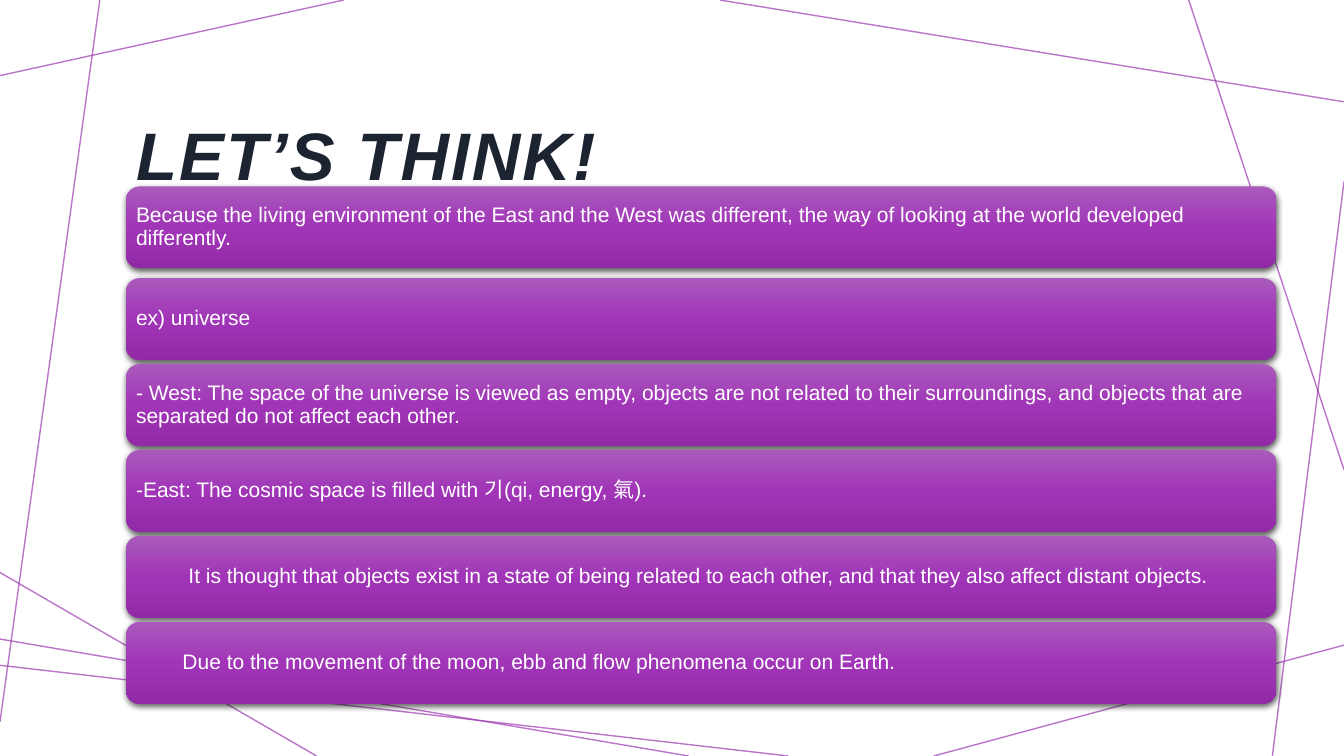
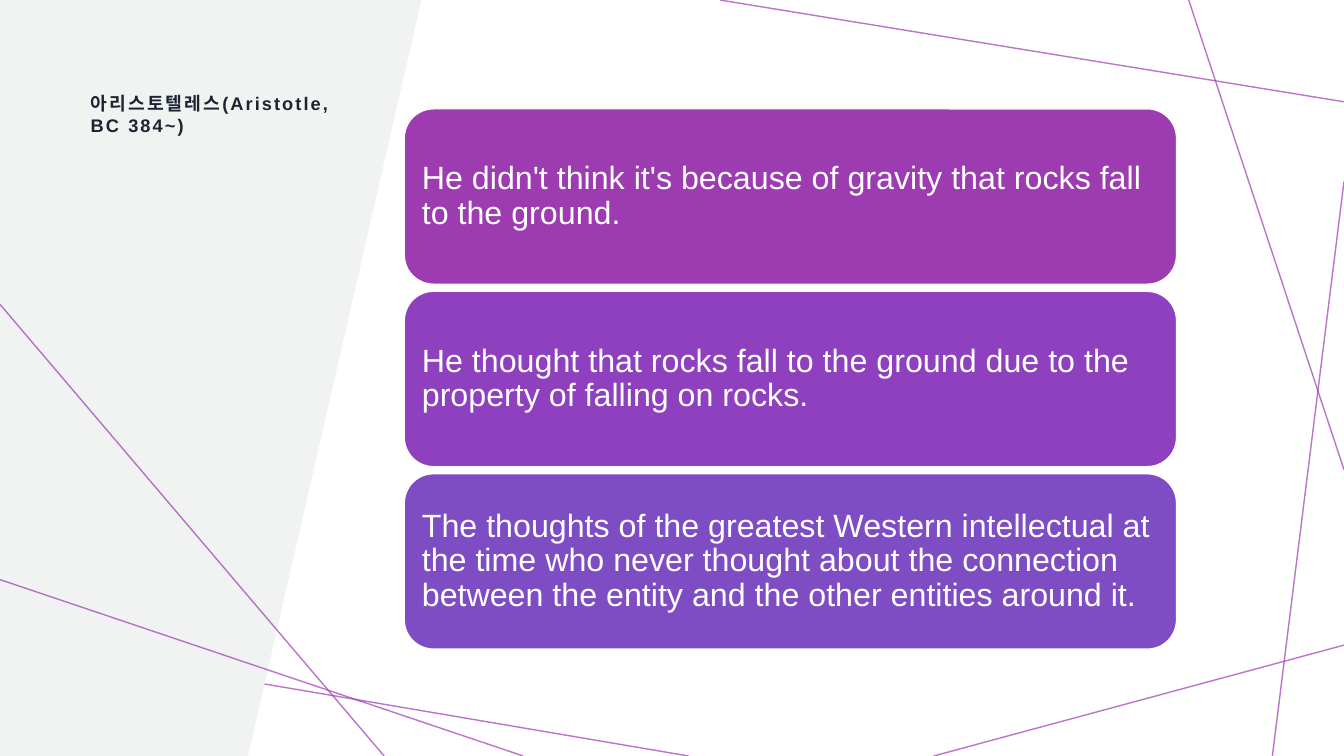
import pptx
import pptx.util
import pptx.dml.color
import pptx.enum.shapes
import pptx.enum.text
import pptx.oxml
import pptx.oxml.ns

Inches = pptx.util.Inches
Pt = pptx.util.Pt
qn = pptx.oxml.ns.qn
MIDDLE = pptx.enum.text.MSO_ANCHOR.MIDDLE
TOP = pptx.enum.text.MSO_ANCHOR.TOP

WIDTH, HEIGHT = 13.33, 7.5
FONT = "Arial"
COLORS = {
    "line": "9D3BB1",
    "title": "1B2430",
    "panel": "F0F3F1",
    "white": "FFFFFF",
    "plum": "9D3BB1",
    "violet": "8F40BE",
    "indigo": "7E4DC3",
    "glow_top": "A95ABC",
    "glow_middle": "A135B7",
    "glow_bottom": "922AA8",
    "shadow": "000000",
}
NAMESPACE = 'xmlns:a="http://schemas.openxmlformats.org/drawingml/2006/main"'

SHARED_LINES = [
    (3.41, 0, 0, 0.75),
    (0.99, 0, 0, 7.16),
    (6.83, HEIGHT, 0, 6.34),
    (WIDTH, 6.4, 9.26, HEIGHT),
    (WIDTH, 1.8, 12.62, HEIGHT),
    (WIDTH, 4.66, 11.79, 0),
    (WIDTH, 1.01, 7.14, 0),
]

# Each bar: text and left indent in inches
THOUGHTS = [
    ("Because the living environment of the East and the West was different, "
     "the way of looking at the world developed differently.", 0),
    ("ex) universe", 0),
    ("- West: The space of the universe is viewed as empty, objects are not "
     "related to their surroundings, and objects that are separated do not "
     "affect each other.", 0),
    ("-East: The cosmic space is filled with 기(qi, energy, 氣).", 0),
    ("It is thought that objects exist in a state of being related to each "
     "other, and that they also affect distant objects.", 0.52),
    ("Due to the movement of the moon, ebb and flow phenomena occur on Earth.",
     0.46),
]

ARISTOTLE_CARDS = [
    ("He didn't think it's because of gravity that rocks fall to the ground.",
     "plum"),
    ("He thought that rocks fall to the ground due to the property of falling "
     "on rocks.", "violet"),
    ("The thoughts of the greatest Western intellectual at the time who never "
     "thought about the connection between the entity and the other entities "
     "around it.", "indigo"),
]


def rgb(name):
    return pptx.dml.color.RGBColor.from_string(COLORS[name])


def apply(target, values):
    for name, value in values.items():
        setattr(target, name, value)


def add_line(slide, start_x, start_y, end_x, end_y):
    connector = slide.shapes.add_connector(
        pptx.enum.shapes.MSO_CONNECTOR.STRAIGHT,
        Inches(start_x), Inches(start_y), Inches(end_x), Inches(end_y))
    connector.line.width = Pt(1)
    connector.line.color.rgb = rgb("line")
    properties = connector.element.spPr
    color = properties.find(".//" + qn("a:srgbClr"))
    color.append(pptx.oxml.parse_xml(f'<a:alpha {NAMESPACE} val="70000"/>'))
    properties.append(pptx.oxml.parse_xml(f"<a:effectLst {NAMESPACE}/>"))
    return connector


def move_lines_to_layout(slide):
    """Draw the lines every slide shares and hand them to the layout."""
    for number, ends in enumerate(SHARED_LINES):
        element = add_line(slide, *ends).element
        element.nvCxnSpPr.cNvPr.set("id", str(100 + number))
        slide.slide_layout.shapes.element.append(element)


def set_title(slide, text, box, size, anchor, italic=None, margins=None):
    title = slide.shapes.title
    left, top, width, height = map(Inches, box)
    apply(title, {"left": left, "top": top, "width": width, "height": height})
    frame = title.text_frame
    frame.text = text
    apply(frame, {"word_wrap": True, "vertical_anchor": anchor,
                  "auto_size": pptx.enum.text.MSO_AUTO_SIZE.NONE,
                  **(margins or {})})
    paragraph = frame.paragraphs[0]
    apply(paragraph, {"alignment": pptx.enum.text.PP_ALIGN.LEFT,
                      "line_spacing": 1.05})
    run = paragraph.runs[0]
    apply(run.font, {"name": FONT, "size": Pt(size), "bold": True,
                     "italic": italic})
    run.font.color.rgb = rgb("title")
    run.font._element.set("spc", "150")


def add_card(slide, text, box, size, margin, indent=0):
    """Add a rounded box with white text; its fill is left to the caller."""
    card = slide.shapes.add_shape(
        pptx.enum.shapes.MSO_SHAPE.ROUNDED_RECTANGLE, *map(Inches, box))
    card.shadow.inherit = False
    frame = card.text_frame
    frame.text = text
    apply(frame, {"word_wrap": True, "vertical_anchor": MIDDLE,
                  "margin_left": Inches(margin + indent),
                  "margin_right": Inches(margin),
                  "margin_top": Inches(margin),
                  "margin_bottom": Inches(margin)})
    paragraph = frame.paragraphs[0]
    apply(paragraph, {"alignment": pptx.enum.text.PP_ALIGN.LEFT,
                      "line_spacing": 0.9})
    apply(paragraph.font, {"name": FONT, "size": Pt(size)})
    paragraph.font.color.rgb = rgb("white")
    return card


def add_glow(card):
    """Give a card a three-stop vertical gradient and a soft shadow."""
    card.line.fill.background()
    card.fill.background()
    stops = "".join(
        f'<a:gs pos="{position}"><a:srgbClr val="{COLORS[name]}"/></a:gs>'
        for position, name in ((0, "glow_top"), (50000, "glow_middle"),
                               (100000, "glow_bottom")))
    properties = card.element.spPr
    properties.replace(properties.find(qn("a:noFill")), pptx.oxml.parse_xml(
        f'<a:gradFill {NAMESPACE} rotWithShape="1"><a:gsLst>{stops}</a:gsLst>'
        '<a:lin ang="5400000" scaled="0"/></a:gradFill>'))
    properties.find(qn("a:effectLst")).append(pptx.oxml.parse_xml(
        f'<a:outerShdw {NAMESPACE} blurRad="{Pt(4.5)}" dist="{Pt(1.5)}" '
        'dir="5400000" algn="ctr" rotWithShape="0">'
        f'<a:srgbClr val="{COLORS["shadow"]}"><a:alpha val="63000"/>'
        '</a:srgbClr></a:outerShdw>'))


def add_thought_bars(slide, left, top, width, height):
    """Stack the bars; the first is set off by a wider gap."""
    bar_height, first_gap = 0.81, 0.1
    pitch = (height - 2 * bar_height - first_gap) / (len(THOUGHTS) - 2)
    for row, (text, indent) in enumerate(THOUGHTS):
        offset = bar_height + first_gap + (row - 1) * pitch if row else 0
        card = add_card(slide, text, (left, top + offset, width, bar_height),
                        15, 0.06, indent)
        add_glow(card)


def add_aristotle_cards(slide, left, top, width, height):
    gap = 0.07
    count = len(ARISTOTLE_CARDS)
    card_height = (height - gap * (count - 1)) / count
    for row, (text, color) in enumerate(ARISTOTLE_CARDS):
        box = (left, top + row * (card_height + gap), width, card_height)
        card = add_card(slide, text, box, 23, 0.09)
        card.fill.solid()
        card.fill.fore_color.rgb = rgb(color)
        card.line.width = Pt(1)
        card.line.color.rgb = rgb("white")


def add_side_panel(slide, top_width, bottom_width):
    corners = [(top_width, 0), (bottom_width, HEIGHT), (0, HEIGHT)]
    builder = slide.shapes.build_freeform(0, 0)
    builder.add_line_segments(
        [(Inches(x), Inches(y)) for x, y in corners], close=True)
    panel = builder.convert_to_shape()
    panel.shadow.inherit = False
    panel.fill.solid()
    panel.fill.fore_color.rgb = rgb("panel")
    panel.line.fill.background()
    slide.shapes.element.insert(2, panel.element)  # behind the title


def build_think_slide(slide):
    set_title(slide, "LET’S THINK!", (1.25, 0.58, 6.57, 1.84), 48, MIDDLE,
              italic=True)
    add_line(slide, 3.14, HEIGHT, 0, 5.68)
    add_line(slide, 7.82, HEIGHT, 0, 6.6)
    add_thought_bars(slide, 1.25, 1.85, 11.41, 5.13)


def build_aristotle_slide(slide):
    add_side_panel(slide, 4.18, 2.46)
    margins = {"margin_left": Inches(0.12), "margin_top": Inches(0.12),
               "margin_right": Inches(0.12), "margin_bottom": Inches(0.1)}
    set_title(slide, "아리스토텔레스(Aristotle, BC 384~)",
              (0.78, 0.78, 2.7, 2.03), 13, TOP, margins=margins)
    add_line(slide, 0, 3.02, 3.81, HEIGHT)
    add_line(slide, 5.19, HEIGHT, 0, 5.75)
    add_aristotle_cards(slide, 4.01, 1.08, 7.66, 5.36)


def main():
    presentation = pptx.Presentation()
    presentation.slide_width = Inches(WIDTH)
    presentation.slide_height = Inches(HEIGHT)
    title_only = presentation.slide_layouts[5]
    think_slide = presentation.slides.add_slide(title_only)
    move_lines_to_layout(think_slide)
    build_think_slide(think_slide)
    build_aristotle_slide(presentation.slides.add_slide(title_only))
    presentation.save("out.pptx")


if __name__ == "__main__":
    main()
